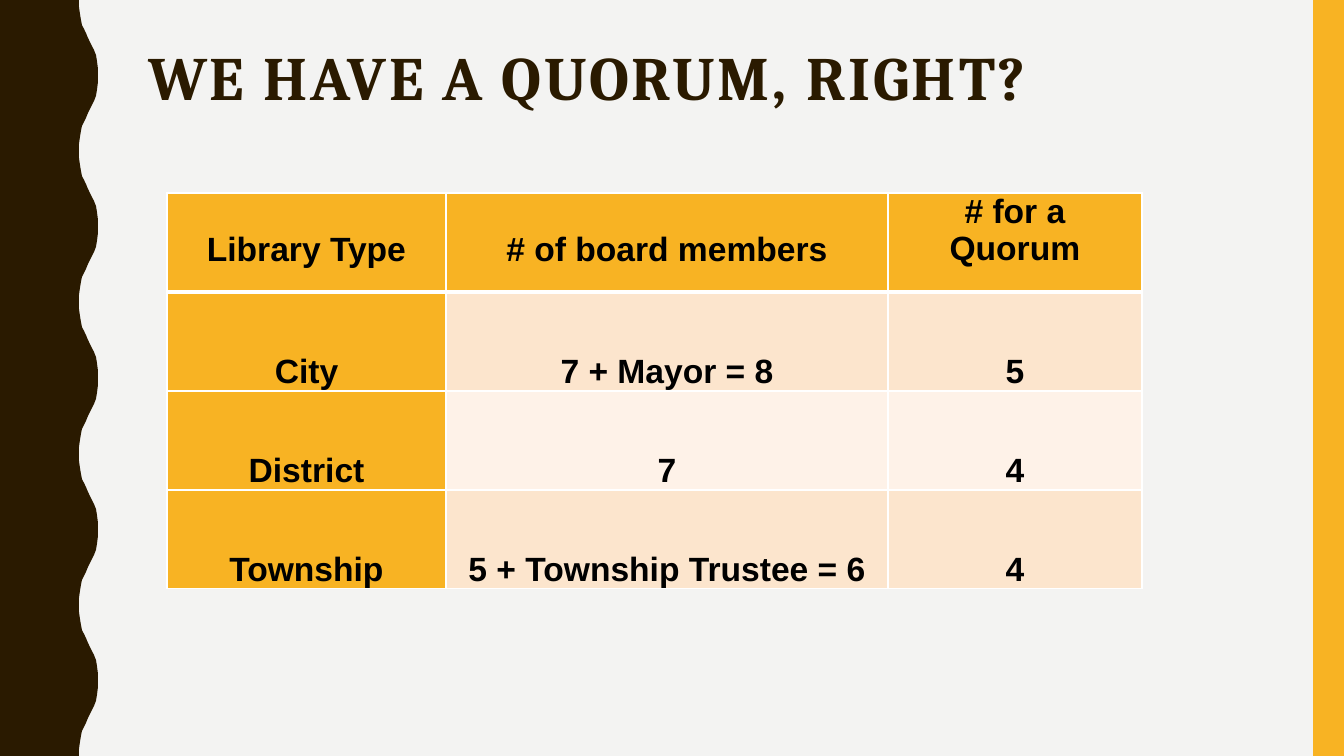
from lxml import etree
from pptx import Presentation
from pptx import util as u
from pptx.dml.color import RGBColor
from pptx.enum import shapes, text
from pptx.oxml.ns import qn

EMU_PER_PX = 914400 / 100.8
WIDTH, HEIGHT = 1344, 756

BROWN = RGBColor(0x2A, 0x1A, 0x00)
GOLD = RGBColor(0xF8, 0xB3, 0x23)
PAPER = RGBColor(0xF3, 0xF3, 0xF2)
PEACH = RGBColor(0xFC, 0xE5, 0xCD)
CREAM = RGBColor(0xFE, 0xF2, 0xE8)
BLACK = RGBColor(0x00, 0x00, 0x00)
WHITE = RGBColor(0xFF, 0xFF, 0xFF)

# Half a wave of the left band, from trough to crest
WAVE_X = (79, 79, 80, 81, 82, 84, 86, 88, 90, 92, 94, 96, 97, 98, 98)
WAVE_Y = (0, 7, 14, 20, 25, 29, 33, 38, 42, 46, 50, 55, 61, 69, 75.6)
HALF_WAVES = 10

COLUMNS = (279, 442, 254)
ROW_HEIGHT = 99
HEADER_LINE = 38
ROWS = (
    ("Library Type", "# of board members", "# for a Quorum"),
    ("City", "7 + Mayor = 8", "5"),
    ("District", "7", "4"),
    ("Township", "5 + Township Trustee = 6", "4"),
)


def px(n):
    return u.Emu(round(n * EMU_PER_PX))


class Deck:
    title_font = "Cambria"
    body_font = "Arial"

    def __init__(self):
        self.prs = Presentation()
        self.prs.slide_width, self.prs.slide_height = px(WIDTH), px(HEIGHT)
        self.s = self.prs.slides.add_slide(self.prs.slide_layouts[5])
        fill = self.s.background.fill
        fill.solid()
        fill.fore_color.rgb = PAPER

    def paint(self, sp, color):
        sp.shadow.inherit = False
        sp.fill.solid()
        sp.fill.fore_color.rgb = color
        sp.line.fill.background()

    def run(self, p, words, font, size, color):
        r = p.add_run()
        r.text = words
        r.font.name, r.font.size, r.font.bold = font, u.Pt(size), True
        r.font.color.rgb = color
        return r

    def wavy_band(self, color):
        points = []
        for k in range(HALF_WAVES):
            half = list(zip(WAVE_X, WAVE_Y))
            if k % 2:
                half = [(x, WAVE_Y[-1] - y) for x, y in reversed(half)]
            points += [(x, k * WAVE_Y[-1] + y) for x, y in half]
        builder = self.s.shapes.build_freeform(0, 0, scale=EMU_PER_PX)
        builder.add_line_segments(points + [(0, HEIGHT)], close=True)
        self.paint(builder.convert_to_shape(), color)

    def bar(self, x, y, w, h, color):
        sp = self.s.shapes.add_shape(
            shapes.MSO_SHAPE.RECTANGLE, px(x), px(y), px(w), px(h))
        self.paint(sp, color)

    def title(self, words, x, y, w, h):
        sp = self.s.shapes.title
        sp.left, sp.top, sp.width, sp.height = px(x), px(y), px(w), px(h)
        tf = sp.text_frame
        tf.word_wrap = True
        tf.auto_size = text.MSO_AUTO_SIZE.NONE
        tf.vertical_anchor = text.MSO_ANCHOR.TOP
        p = tf.paragraphs[0]
        p.alignment = text.PP_ALIGN.LEFT
        p.line_spacing = 0.9
        r = self.run(p, words, self.title_font, 44, BROWN)
        r.font._element.set("spc", "200")

    def borders(self, cell, row):
        """Rule the cell in white, with a heavier line under the header."""
        heavy = {0: "lnB", 1: "lnT"}.get(row)
        tc_pr = cell._tc.get_or_add_tcPr()
        for side in ("lnL", "lnR", "lnT", "lnB"):
            width = u.Pt(3 if side == heavy else 1)
            ln = etree.SubElement(tc_pr, qn(f"a:{side}"), w=str(width))
            fill = etree.SubElement(ln, qn("a:solidFill"))
            etree.SubElement(fill, qn("a:srgbClr"), val=str(WHITE))

    def cell(self, cell, words, row, col):
        self.borders(cell, row)
        cell.fill.solid()
        if row == 0 or col == 0:
            cell.fill.fore_color.rgb = GOLD
        else:
            cell.fill.fore_color.rgb = PEACH if row % 2 else CREAM
        cell.margin_left = cell.margin_right = px(7)
        # One-line headings sit level with the second line of the last one
        cell.margin_top = px(HEADER_LINE if row == 0 and col < 2 else 0)
        cell.margin_bottom = 0
        cell.vertical_anchor = (
            text.MSO_ANCHOR.BOTTOM if row else text.MSO_ANCHOR.TOP)
        p = cell.text_frame.paragraphs[0]
        p.alignment = text.PP_ALIGN.CENTER
        self.run(p, words, self.body_font, 24, BLACK)

    def table(self, x, y, columns, rows):
        table = self.s.shapes.add_table(
            len(rows), len(columns), px(x), px(y),
            px(sum(columns)), px(ROW_HEIGHT * len(rows))).table
        for column, width in zip(table.columns, columns):
            column.width = px(width)
        for i, row in enumerate(rows):
            table.rows[i].height = px(ROW_HEIGHT)
            for j, words in enumerate(row):
                self.cell(table.cell(i, j), words, i, j)


def main():
    deck = Deck()
    deck.wavy_band(BROWN)
    deck.bar(1313, 0, 31, HEIGHT, GOLD)
    deck.title("WE HAVE A QUORUM, RIGHT?", 138, 42, 1122, 164)
    deck.table(167, 193, COLUMNS, ROWS)
    deck.prs.save("out.pptx")


if __name__ == "__main__":
    main()
